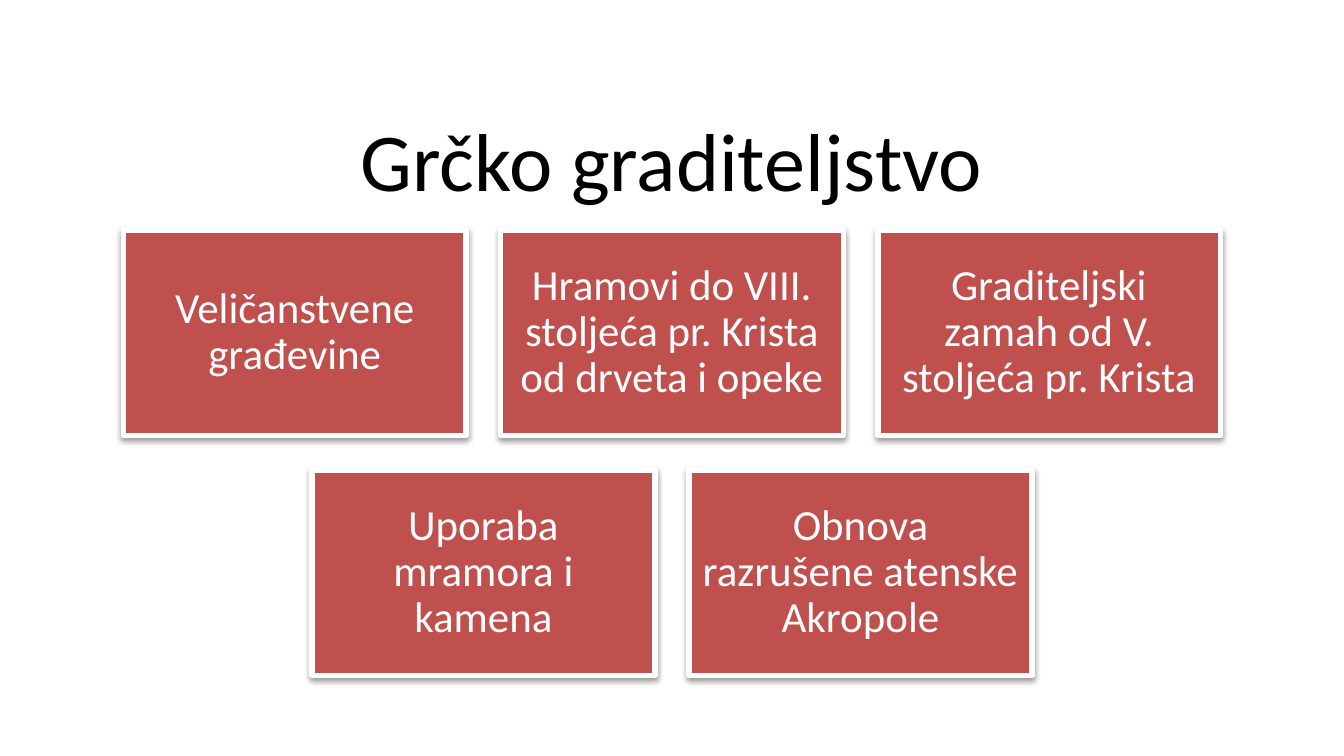
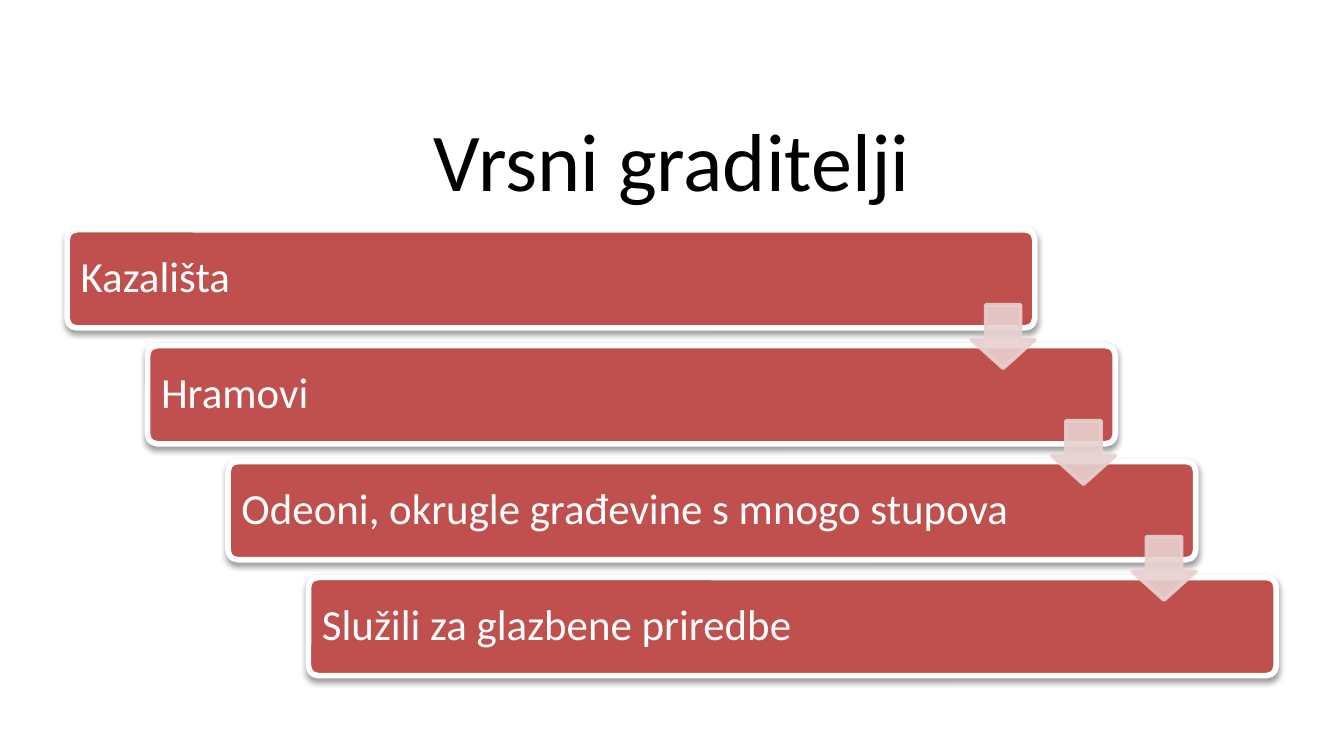
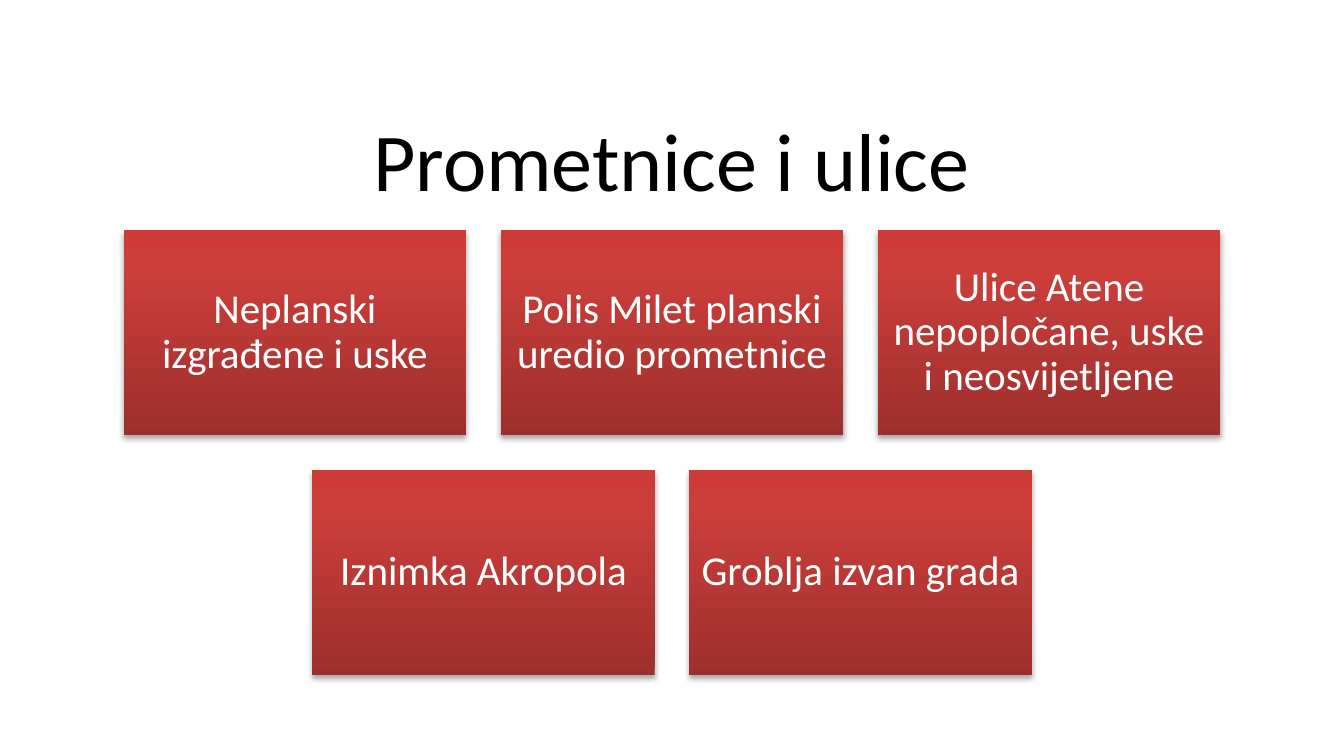
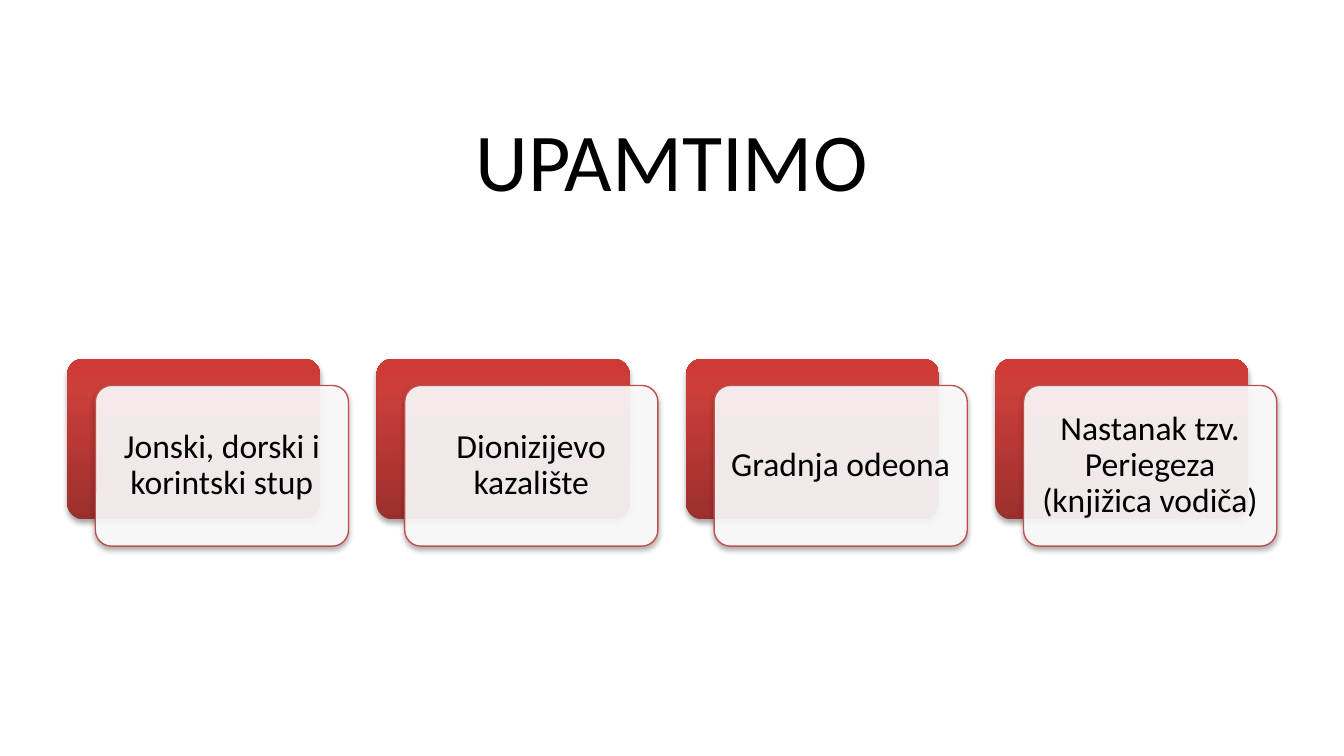
"""Build four slides on Greek architecture with tiles, steps and cards."""
from copy import deepcopy

from lxml import etree
from pptx import Presentation
from pptx.dml.color import RGBColor
from pptx.enum import shapes, text
from pptx.oxml.ns import qn
from pptx.util import Pt

BUILDING_TITLE = "Grčko graditeljstvo"
BUILDING_ROWS = [
    ["Veličanstvene građevine", "Hramovi do VIII. stoljeća pr. Krista od drveta i opeke",
     "Graditeljski zamah od V. stoljeća pr. Krista"],
    ["Uporaba mramora i kamena", "Obnova razrušene atenske Akropole"],
]
BUILDERS_TITLE = "Vrsni graditelji"
BUILDER_STEPS = ["Kazališta", "Hramovi", "Odeoni, okrugle građevine s mnogo stupova",
                 "Služili za glazbene priredbe"]
STREETS_TITLE = "Prometnice i ulice"
STREET_ROWS = [
    ["Neplanski izgrađene i uske", "Polis Milet planski uredio prometnice",
     "Ulice Atene nepopločane, uske i neosvijetljene"],
    ["Iznimka Akropola", "Groblja izvan grada"],
]
SUMMARY_TITLE = "UPAMTIMO"
SUMMARY_CARDS = ["Jonski, dorski i korintski stup", "Dionizijevo kazalište", "Gradnja odeona",
                 "Nastanak tzv. Periegeza (knjižica vodiča)"]

FONT = "Calibri"
RED, WHITE, BLACK, PINK = "C0504D", "FFFFFF", "000000", "E8D0D0"
GRADIENT = [(0, "9C2F2D"), (0.8, "CB3E3A"), (1, "CE3B37")]
FLAT_SHADOW = (38, 1.6)
GRADIENT_SHADOW = (35, 1.8)
SLIDE_WIDTH, SLIDE_HEIGHT = 720, 405
MARGIN, BODY_TOP = 36, 123.1
ROUNDING = 0.1
CORNER_INSET = 0.29 * ROUNDING

RECTANGLE = shapes.MSO_SHAPE.RECTANGLE
ROUNDED = shapes.MSO_SHAPE.ROUNDED_RECTANGLE
ARROW = shapes.MSO_SHAPE.DOWN_ARROW
CENTER, LEFT = text.PP_ALIGN.CENTER, text.PP_ALIGN.LEFT


def rgb(color):
    return RGBColor.from_string(color)


def write(shape, words, size, color, align=CENTER, inset=None):
    frame = shape.text_frame
    frame.word_wrap = True
    frame.vertical_anchor = text.MSO_ANCHOR.MIDDLE
    if inset is not None:
        frame.margin_left = frame.margin_right = Pt(inset)
        frame.margin_top = frame.margin_bottom = Pt(inset)
    paragraph = frame.paragraphs[0]
    paragraph.text = words
    paragraph.alignment = align
    paragraph.line_spacing = 0.9
    paragraph.font.name = FONT
    paragraph.font.size = Pt(size)
    paragraph.font.color.rgb = rgb(color)


def fill_gradient(shape):
    shape.fill.gradient()
    shape.fill.gradient_angle = 90
    stop_list = shape._element.spPr.find(".//" + qn("a:gsLst"))
    stop_list.append(deepcopy(stop_list[0]))
    for stop, (position, color) in zip(shape.fill.gradient_stops, GRADIENT):
        stop.position = position
        stop.color.rgb = rgb(color)


def set_alpha(color_parent, percent):
    for color in color_parent.iter(qn("a:srgbClr")):
        etree.SubElement(color, qn("a:alpha"), val=str(percent * 1000))


def cast_shadow(shape, percent, distance):
    effects = shape._element.spPr.find(qn("a:effectLst"))
    shadow = etree.SubElement(effects, qn("a:outerShdw"), blurRad=str(Pt(3.1)),
                              dist=str(Pt(distance)), dir="5400000", rotWithShape="0")
    etree.SubElement(shadow, qn("a:srgbClr"), val=BLACK)
    set_alpha(shadow, percent)


def add_box(slide, kind, box, fill=None, line=None, alpha=None, shadow=None):
    """Add a shape; without a fill colour it gets the red gradient."""
    shape = slide.shapes.add_shape(kind, *map(Pt, box))
    shape.shadow.inherit = False
    if kind == ROUNDED:
        shape.adjustments[0] = ROUNDING
    if fill:
        shape.fill.solid()
        shape.fill.fore_color.rgb = rgb(fill)
    else:
        fill_gradient(shape)
    if line:
        color, width = line
        shape.line.color.rgb = rgb(color)
        shape.line.width = Pt(width)
    else:
        shape.line.fill.background()
    properties = shape._element.spPr
    if alpha:
        set_alpha(properties.find(qn("a:solidFill")), alpha)
    if shadow:
        cast_shadow(shape, *shadow)
    return shape


def add_slide(presentation, title):
    slide = presentation.slides.add_slide(presentation.slide_layouts[6])
    box = slide.shapes.add_textbox(Pt(MARGIN), Pt(60.5), Pt(SLIDE_WIDTH - 2 * MARGIN), Pt(56))
    write(box, title, 44, BLACK)
    return slide


def add_tiles(slide, rows, size, inset, **style):
    width, height, gap = 183.6, 110.2, 18.4
    for row_index, row in enumerate(rows):
        row_width = len(row) * (width + gap) - gap
        left = (SLIDE_WIDTH - row_width) / 2
        top = BODY_TOP + row_index * (height + gap)
        for column, words in enumerate(row):
            box = (left + column * (width + gap), top, width, height)
            write(add_box(slide, RECTANGLE, box, **style), words, size, WHITE, inset=inset)


def add_steps(slide, steps):
    width, height, shift, drop, arrow_size = 518.4, 52.6, 43.1, 62.1, 34
    for index, words in enumerate(steps):
        box = (MARGIN + index * shift, BODY_TOP + index * drop, width, height)
        step = add_box(slide, ROUNDED, box, RED, (WHITE, 3), shadow=FLAT_SHADOW)
        write(step, words, 23, WHITE, LEFT, 7.2 - CORNER_INSET * height)
    for index in range(len(steps) - 1):
        left = MARGIN + width - arrow_size + index * shift
        box = (left, 163.3 + index * drop, arrow_size, arrow_size)
        arrow = add_box(slide, ARROW, box, PINK, (PINK, 2), alpha=90)
        arrow.adjustments[0], arrow.adjustments[1] = 0.55, 0.45
        set_alpha(arrow.line._ln, 90)


def add_cards(slide, cards):
    width, height, pitch, top = 135.6, 86.1, 165.75, 192.2
    for index, words in enumerate(cards):
        left = MARGIN + index * pitch
        add_box(slide, ROUNDED, (left, top, width, height), shadow=GRADIENT_SHADOW)
        card = add_box(slide, ROUNDED, (left + 15.1, top + 14.3, width, height), WHITE,
                       (RED, 0.75), alpha=90, shadow=GRADIENT_SHADOW)
        write(card, words, 18, BLACK, inset=5 - CORNER_INSET * height)


def main():
    presentation = Presentation()
    presentation.slide_width = Pt(SLIDE_WIDTH)
    presentation.slide_height = Pt(SLIDE_HEIGHT)
    add_tiles(add_slide(presentation, BUILDING_TITLE), BUILDING_ROWS, 23, 7.2,
              fill=RED, line=(WHITE, 3), shadow=FLAT_SHADOW)
    add_steps(add_slide(presentation, BUILDERS_TITLE), BUILDER_STEPS)
    add_tiles(add_slide(presentation, STREETS_TITLE), STREET_ROWS, 22, 6.5,
              shadow=GRADIENT_SHADOW)
    add_cards(add_slide(presentation, SUMMARY_TITLE), SUMMARY_CARDS)
    presentation.save("out.pptx")


if __name__ == "__main__":
    main()
